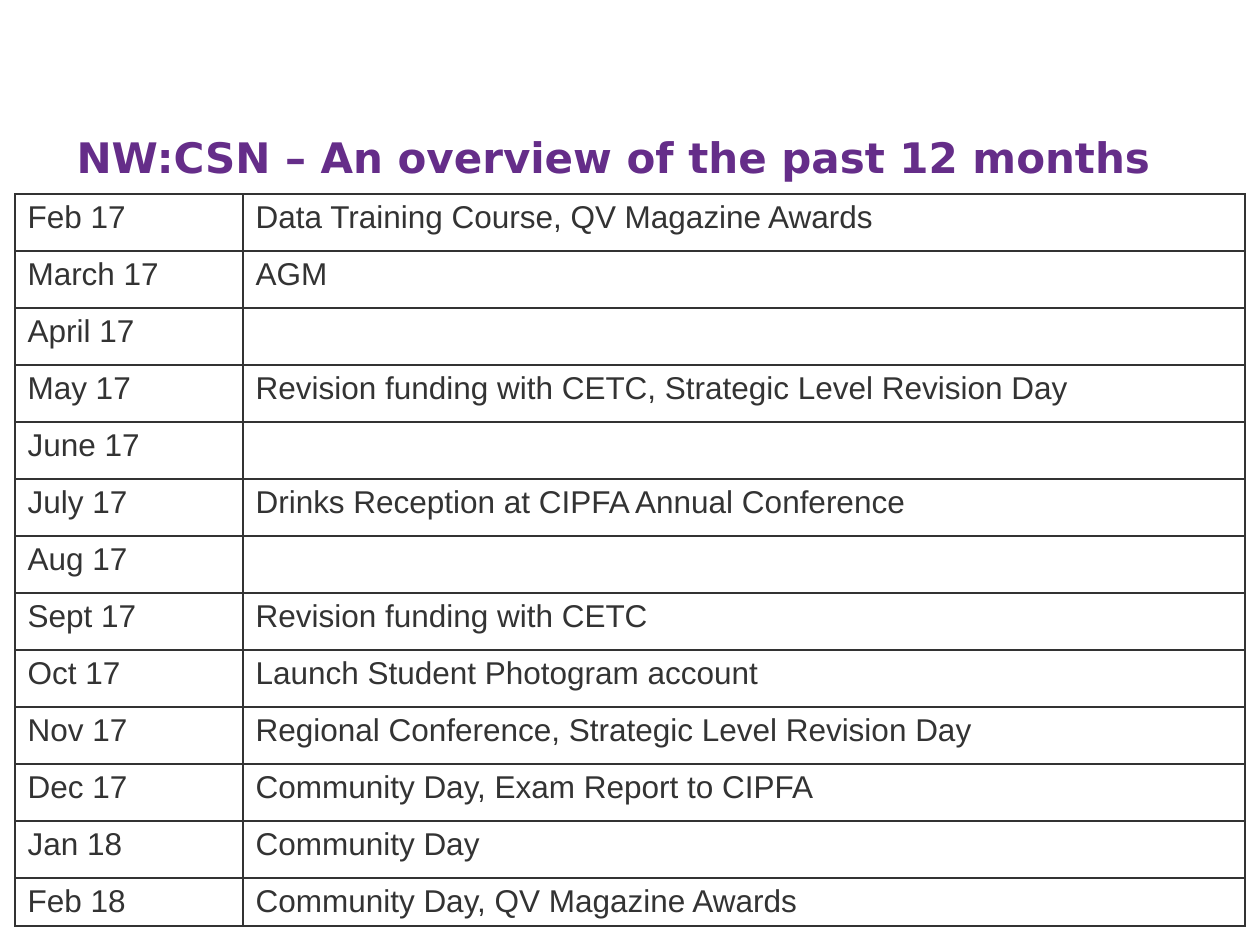
from dataclasses import dataclass

from lxml.etree import SubElement
from pptx import Presentation
from pptx.dml.color import RGBColor as Rgb
from pptx.enum.text import MSO_ANCHOR as Anchor, PP_ALIGN as Align
from pptx.oxml.ns import qn
from pptx.util import Pt


@dataclass(frozen=True)
class Theme:
    title: str = "652D89"
    ink: str = "333333"
    head: str = "DejaVu Sans"
    body: str = "Arial"
    head_pt: int = 24
    body_pt: int = 18
    rule_pt: int = 1


@dataclass(frozen=True)
class Month:
    name: str
    event: str = ""


THEME = Theme()
WIDE, HIGH = 1260, 945
COLS = (228, 1002)
ROW, LAST = 57, 42

MONTHS = (
    Month("Feb 17", "Data Training Course, QV Magazine Awards"),
    Month("March 17", "AGM"),
    Month("April 17"),
    Month("May 17", "Revision funding with CETC, Strategic Level Revision Day"),
    Month("June 17"),
    Month("July 17", "Drinks Reception at CIPFA Annual Conference"),
    Month("Aug 17"),
    Month("Sept 17", "Revision funding with CETC"),
    Month("Oct 17", "Launch Student Photogram account"),
    Month("Nov 17", "Regional Conference, Strategic Level Revision Day"),
    Month("Dec 17", "Community Day, Exam Report to CIPFA"),
    Month("Jan 18", "Community Day"),
    Month("Feb 18", "Community Day, QV Magazine Awards"),
)


def px(n: int) -> int:
    """Turn px at 126 to the inch into EMU."""
    return round(n * 914400 / 126)


def add_run(para, text: str, face: str, size: int, color: str, bold: bool = False) -> None:
    run = para.add_run()
    run.text = text
    font = run.font
    font.name, font.size, font.bold = face, Pt(size), bold
    font.color.rgb = Rgb.from_string(color)


def add_rules(cell) -> None:
    """Draw a thin rule on all four sides of a cell."""
    props = cell._tc.get_or_add_tcPr()
    for place, side in enumerate(("lnL", "lnR", "lnT", "lnB")):
        line = SubElement(props, qn(f"a:{side}"), w=str(Pt(THEME.rule_pt)))
        fill = SubElement(line, qn("a:solidFill"))
        SubElement(fill, qn("a:srgbClr"), val=THEME.ink)
        props.insert(place, line)


def set_cell(cell, text: str) -> None:
    cell.fill.background()
    add_rules(cell)
    cell.vertical_anchor = Anchor.TOP
    para = cell.text_frame.paragraphs[0]
    para.font.size = Pt(THEME.body_pt)
    if text:
        add_run(para, text, THEME.body, THEME.body_pt, THEME.ink)


def set_title(shape, text: str) -> None:
    shape.left, shape.top, shape.width, shape.height = map(px, (64, 125, 1260, 78))
    frame = shape.text_frame
    frame.word_wrap = True
    frame.vertical_anchor = Anchor.TOP
    para = frame.paragraphs[0]
    para.alignment = Align.LEFT
    add_run(para, text, THEME.head, THEME.head_pt, THEME.title, True)


def add_months(slide) -> None:
    high = ROW * (len(MONTHS) - 1) + LAST
    grid = slide.shapes.add_table(
        len(MONTHS), len(COLS), px(15), px(194), px(sum(COLS)), px(high)
    ).table
    grid.first_row = grid.horz_banding = False
    for col, wide in zip(grid.columns, COLS):
        col.width = px(wide)
    for i, month in enumerate(MONTHS):
        grid.rows[i].height = px(LAST if month is MONTHS[-1] else ROW)
        set_cell(grid.cell(i, 0), month.name)
        set_cell(grid.cell(i, 1), month.event)


def main() -> None:
    deck = Presentation()
    deck.slide_width, deck.slide_height = px(WIDE), px(HIGH)
    slide = deck.slides.add_slide(deck.slide_layouts[5])

    # Heading
    set_title(slide.shapes.title, "NW:CSN – An overview of the past 12 months")

    # Month by month
    add_months(slide)

    deck.save("out.pptx")


if __name__ == "__main__":
    main()
